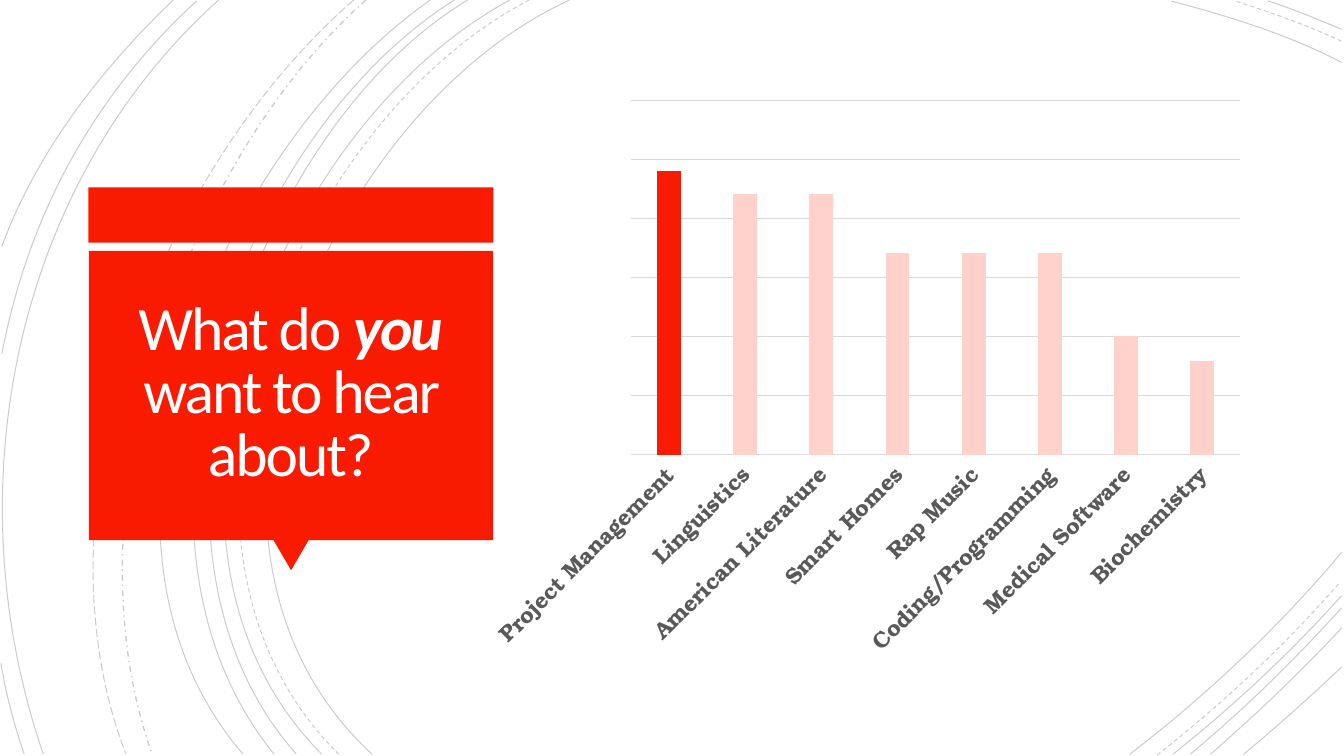
from dataclasses import dataclass

from lxml import etree
from pptx import Presentation
from pptx.chart.data import CategoryChartData
from pptx.dml.color import RGBColor
from pptx.enum.chart import XL_CHART_TYPE, XL_TICK_LABEL_POSITION, XL_TICK_MARK
from pptx.enum.dml import MSO_LINE
from pptx.enum.shapes import MSO_SHAPE
from pptx.enum.text import MSO_ANCHOR, PP_ALIGN
from pptx.oxml.ns import qn
from pptx.util import Pt

COLUMNS = XL_CHART_TYPE.COLUMN_CLUSTERED
NO_TICK = XL_TICK_MARK.NONE
NEXT_TO_AXIS = XL_TICK_LABEL_POSITION.NEXT_TO_AXIS
RECTANGLE, TRIANGLE = MSO_SHAPE.RECTANGLE, MSO_SHAPE.ISOSCELES_TRIANGLE
SOLID, DASH = MSO_LINE.SOLID, MSO_LINE.DASH
DASH_DOT, LONG_DASH = MSO_LINE.DASH_DOT, MSO_LINE.LONG_DASH
MIDDLE, CENTER = MSO_ANCHOR.MIDDLE, PP_ALIGN.CENTER
TITLE_ONLY = 5


@dataclass(frozen=True)
class Theme:
    accent: RGBColor = RGBColor(0xF8, 0x1B, 0x02)
    pale: RGBColor = RGBColor(0xFF, 0xD1, 0xCB)
    title: RGBColor = RGBColor(0xFF, 0xFE, 0xFF)
    label: RGBColor = RGBColor(0x59, 0x59, 0x59)
    grid: RGBColor = RGBColor(0xD9, 0xD9, 0xD9)
    ink: RGBColor = RGBColor(0, 0, 0)
    title_font: str = "Calibri"
    chart_font: str = "TeX Gyre Bonum"
    title_size: int = 44
    chart_size: int = 10
    label_size: int = 16
    hairline: float = 0.75
    arc_opacity: int = 20


THEME = Theme()

# Start, two control points and end of each background arc, by line style
ARCS = {
    (SOLID, THEME.hairline): [
        ((406.8, 0), (226.8, 82.8), (103, 388.8), (265.7, 538.6)),
        ((364.3, 0), (194.4, 91.4), (79.2, 386.6), (229.7, 538.6)),
        ((334.1, 0), (175.7, 95.8), (79.2, 389.5), (211.7, 538.6)),
        ((324.7, 0), (166.3, 99.4), (69.8, 383.8), (195.8, 538.6)),
        ((307.4, 0), (156.2, 105.8), (38.2, 380.9), (173.5, 538.6)),
        ((156.2, 0), (7.9, 133.2), (-33.1, 352.8), (31, 538.6)),
        ((140.4, 0.7), (66.2, 69.1), (20.2, 154.1), (1.4, 252.7)),
        ((123.8, 0), (72, 49.7), (26.6, 108), (1.4, 175.7)),
        ((0.7, 473.8), (4.3, 496.1), (10.1, 517.7), (17.3, 538.6)),
        ((958.3, 44.6), (920.2, 24.5), (877, 11.5), (836.6, 0.7)),
        ((958.3, 20.9), (941, 13.7), (923.8, 6.5), (905.8, 0.7)),
        ((807.1, 538.6), (861.8, 496.8), (913.7, 447.8), (958.3, 394.6)),
        ((838.1, 538.6), (880.6, 504.7), (921.6, 466.6), (958.3, 425.5)),
        ((850.3, 538.6), (888.5, 506.9), (924.5, 471.6), (958.3, 434.2)),
        ((864.7, 538.6), (897.1, 510.5), (928.8, 480.2), (958.3, 448.6)),
        ((888.5, 538.6), (912.2, 519.1), (935.3, 498.2), (958.3, 476.6)),
    ],
    (DASH, THEME.hairline): [
        ((378, 0), (205.2, 90), (88.6, 386.6), (241.9, 538.6)),
        ((958.3, 29.5), (933.8, 18), (907.2, 8.6), (882, 0.7)),
        ((826.6, 539.3), (873.4, 502.6), (918, 460.8), (957.6, 415.4)),
    ],
    (DASH_DOT, 1): [((261.4, 0), (126.7, 119.5), (46.8, 366.5), (108.7, 538.6))],
    (LONG_DASH, THEME.hairline): [((252.7, 0), (113, 121.7), (20.9, 359.3), (90, 538.6))],
}

TOPIC_INTEREST = {
    "Project Management": 100,
    "Linguistics": 92,
    "American Literature": 92,
    "Smart Homes": 71,
    "Rap Music": 71,
    "Coding/Programming": 71,
    "Medical Software": 42,
    "Biochemistry": 33,
}
INTEREST_MAX = 125
GRID_STEPS = 6


def bend(curve):
    """Turn the three straight segments of a freeform into one cubic Bézier."""
    segments = list(curve.element.iter(qn("a:lnTo")))
    outline = segments[0].getparent()
    bezier = etree.SubElement(outline, qn("a:cubicBezTo"))
    for segment in segments:
        bezier.append(segment[0])
        outline.remove(segment)


def add_arc(slide, arc, dash, width):
    start, *rest = [(Pt(x), Pt(y)) for x, y in arc]
    builder = slide.shapes.build_freeform(*start)
    builder.add_line_segments(rest, close=False)
    curve = builder.convert_to_shape()
    bend(curve)
    curve.shadow.inherit = False
    curve.fill.background()
    curve.line.width = Pt(width)
    curve.line.color.rgb = THEME.ink
    curve.line.dash_style = dash
    ink = next(curve.element.iter(qn("a:srgbClr")))
    etree.SubElement(ink, qn("a:alpha"), val=str(THEME.arc_opacity * 1000))


def add_panel(slide, preset, box, rotation=0):
    panel = slide.shapes.add_shape(preset, *map(Pt, box))
    panel.rotation = rotation
    panel.shadow.inherit = False
    panel.fill.solid()
    panel.fill.fore_color.rgb = THEME.accent
    panel.line.fill.background()


def place_title(slide, parts, box):
    """Fill the title with (text, emphasised) parts and bring it to the front."""
    title = slide.shapes.title
    title.left, title.top, title.width, title.height = map(Pt, box)
    frame = title.text_frame
    frame.word_wrap = True
    frame.vertical_anchor = MIDDLE
    frame.margin_left = frame.margin_right = Pt(18)
    frame.margin_top = frame.margin_bottom = Pt(18)
    paragraph = frame.paragraphs[0]
    paragraph.alignment = CENTER
    paragraph.line_spacing = 0.85
    for text, emphasised in parts:
        run = paragraph.add_run()
        run.text = text
        run.font.name = THEME.title_font
        run.font.size = Pt(THEME.title_size)
        run.font.color.rgb = THEME.title
        run.font.bold = run.font.italic = emphasised
        run.font._element.set("spc", "-150")
    title.element.getparent().append(title.element)


def style_line(line):
    line.color.rgb = THEME.grid
    line.width = Pt(THEME.hairline)


def style_axes(chart):
    topics = chart.category_axis
    topics.major_tick_mark = topics.minor_tick_mark = NO_TICK
    topics.tick_label_position = NEXT_TO_AXIS
    topics.has_major_gridlines = False
    style_line(topics.format.line)
    font = topics.tick_labels.font
    font.name = THEME.chart_font
    font.size = Pt(THEME.label_size)
    font.bold = True
    font.color.rgb = THEME.label
    label_body = next(topics._element.iter(qn("a:bodyPr")))
    label_body.set("rot", str(-45 * 60000))
    label_body.set("vert", "horz")

    interest = chart.value_axis
    interest.minimum_scale = 0
    interest.maximum_scale = INTEREST_MAX
    interest.major_unit = INTEREST_MAX / GRID_STEPS
    interest.major_tick_mark = interest.minor_tick_mark = NO_TICK
    interest.has_major_gridlines = True
    style_line(interest.major_gridlines.format.line)
    interest.visible = False


def add_interest_chart(slide, box):
    data = CategoryChartData()
    data.categories = list(TOPIC_INTEREST)
    data.add_series("Series 1", list(TOPIC_INTEREST.values()))
    chart = slide.shapes.add_chart(COLUMNS, *map(Pt, box), data).chart
    chart.has_legend = chart.has_title = False
    chart.font.name = THEME.chart_font
    chart.font.size = Pt(THEME.chart_size)
    chart.font.color.rgb = THEME.ink
    style_axes(chart)

    plot = chart.plots[0]
    plot.vary_by_categories = False
    plot.gap_width = 219
    plot.overlap = -27
    columns = plot.series[0]
    top_topic = columns.points[0]
    for part, color in ((columns, THEME.pale), (top_topic, THEME.accent)):
        part.format.fill.solid()
        part.format.fill.fore_color.rgb = color


def main():
    deck = Presentation()
    deck.slide_width, deck.slide_height = Pt(960), Pt(540)
    slide = deck.slides.add_slide(deck.slide_layouts[TITLE_ONLY])
    for (dash, width), arcs in ARCS.items():
        for arc in arcs:
            add_arc(slide, arc, dash, width)
    add_panel(slide, RECTANGLE, (63.2, 133.8, 289.2, 39.6))
    add_panel(slide, TRIANGLE, (195.3, 385.7, 25.2, 21.6), rotation=180)
    add_panel(slide, RECTANGLE, (63.5, 179.2, 288.8, 206.6))
    question = [("What do ", False), ("you", True), (" want to hear about?", False)]
    place_title(slide, question, (69.8, 185, 275.8, 193.7))
    add_interest_chart(slide, (339.8, 63.4, 557.3, 413.3))
    deck.save("out.pptx")


if __name__ == "__main__":
    main()
